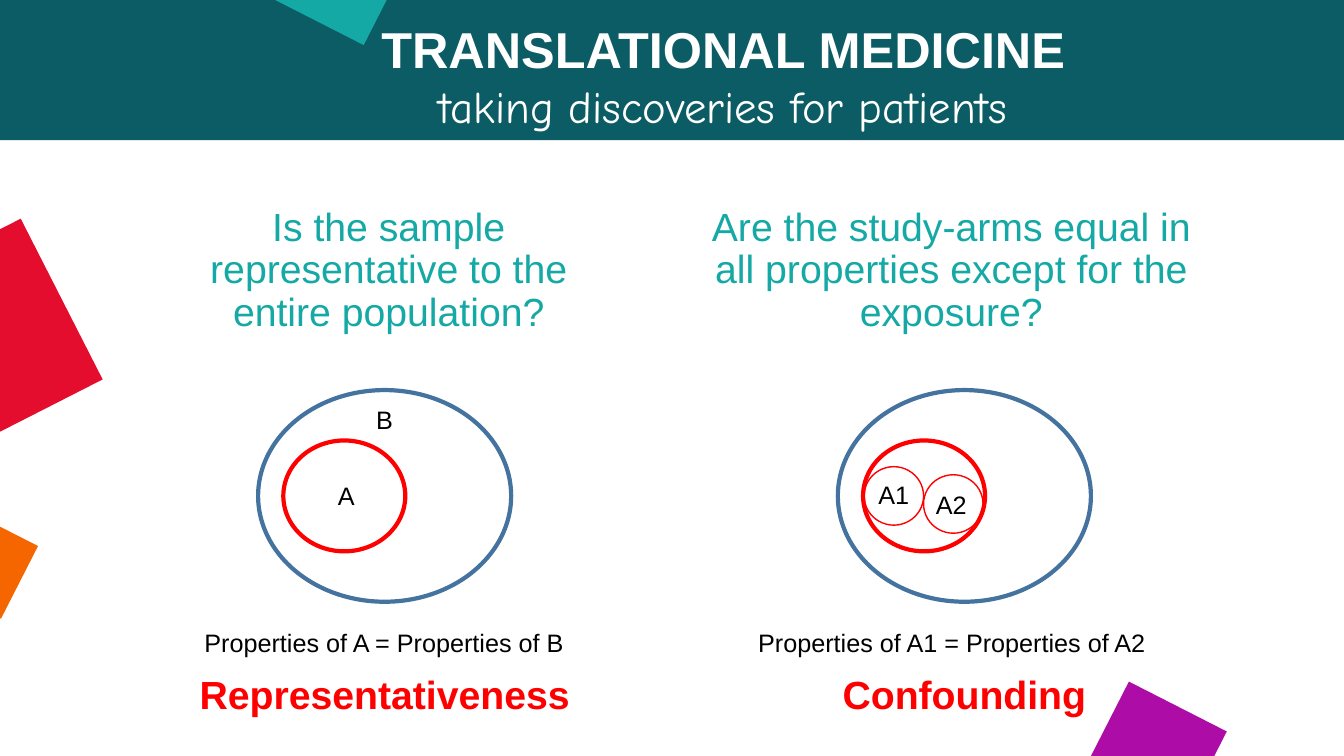
from pptx import Presentation
from pptx.dml.color import RGBColor
from pptx.enum.shapes import MSO_SHAPE
from pptx.enum.text import MSO_ANCHOR, MSO_AUTO_SIZE, PP_ALIGN
from pptx.oxml.ns import qn
from pptx.util import Inches, Pt

PETROL = RGBColor(0x0C, 0x5C, 0x65)
TEAL = RGBColor(0x15, 0xA9, 0xA6)
CRIMSON = RGBColor(0xE5, 0x0D, 0x2E)
PURPLE = RGBColor(0xAD, 0x0D, 0xA6)
ORANGE = RGBColor(0xF5, 0x66, 0x00)
BLUE = RGBColor(0x43, 0x73, 0x9E)
RED = RGBColor(0xFF, 0, 0)
BLACK = RGBColor(0, 0, 0)
WHITE = RGBColor(0xFF, 0xFF, 0xFF)

WIDTH, HEIGHT = 13.33, 7.5
PANEL_LEFT, PANEL_STEP = 1.66, 5.75
COMPARISON_LAYOUT = 4

HEADING = ["TRANSLATIONAL MEDICINE", "taking discoveries for patients"]

# left, top, width, height, rotation, colour
DECORATIONS = [
    (0, 0, WIDTH, 1.39, 0, PETROL),
    (-1.09, 2.48, 1.8, 1.79, 333, CRIMSON),
    (10.89, 6.95, 1.09, 1.09, 27, PURPLE),
    (-0.61, 5.18, 0.85, 0.81, 27, ORANGE),
    (2.91, -0.73, 0.98, 1.01, 27, TEAL),
]

# Offsets of the ovals and labels are measured from the panel's left edge
POPULATION_AND_SAMPLE = [
    (0.9, 3.87, 2.51, 2.1, BLUE, 3),
    (1.15, 4.37, 1.21, 1.1, RED, 3),
]
PANELS = [
    {
        "question": "Is the sample representative to the entire population?",
        "question_box": (1.7, 4.31),
        "arms": [],
        "labels": [("A", 1.59, 4.72, 0.37), ("B", 1.97, 3.96, 0.37),
                   ("Properties of A = Properties of B", 0.25, 6.17, 3.8)],
        "verdict": "Representativeness",
    },
    {
        "question": "Are the study-arms equal in all properties except for the exposure?",
        "question_box": (6.87, 5.13),
        "arms": [(1.16, 4.63, 0.59, 0.58, RED, 1), (1.75, 4.71, 0.59, 0.58, RED, 1)],
        "labels": [("A1", 1.2, 4.71, 0.51), ("A2", 1.77, 4.81, 0.51),
                   ("Properties of A1 = Properties of A2", -0.01, 6.17, 4.08)],
        "verdict": "Confounding",
    },
]


def place(shape, left, top, width, height):
    shape.left, shape.top = Inches(left), Inches(top)
    shape.width, shape.height = Inches(width), Inches(height)


def style(paragraph, size, color, bold=False, font="Arial", spacing=1.0):
    properties = paragraph._p.get_or_add_pPr()
    properties.set("marL", "0")
    properties.set("indent", "0")
    properties.append(properties.makeelement(qn("a:buNone"), {}))
    paragraph.alignment = PP_ALIGN.CENTER
    paragraph.line_spacing = spacing
    paragraph.space_before = Pt(0)
    for run in paragraph.runs:
        run.font.name, run.font.size, run.font.bold = font, Pt(size), bold
        run.font.color.rgb = color


def fill_placeholder(placeholder, text, box):
    place(placeholder, *box)
    frame = placeholder.text_frame
    frame.text = text
    frame.word_wrap = True
    frame.auto_size = MSO_AUTO_SIZE.NONE
    frame.vertical_anchor = MSO_ANCHOR.TOP
    return frame.paragraphs


def add_oval(slide, left, top, width, height, color, weight):
    oval = slide.shapes.add_shape(MSO_SHAPE.OVAL, Inches(left), Inches(top),
                                  Inches(width), Inches(height))
    oval.shadow.inherit = False
    oval.fill.background()
    oval.line.color.rgb = color
    oval.line.width = Pt(weight)


def add_label(slide, text, left, top, width):
    label = slide.shapes.add_textbox(Inches(left), Inches(top), Inches(width), Inches(0.4))
    label.text_frame.text = text
    label.text_frame.word_wrap = False
    style(label.text_frame.paragraphs[0], 18, BLACK)


def add_decorations(slide):
    """Add the header band and tilted squares behind the placeholders."""
    for left, top, width, height, rotation, color in DECORATIONS:
        block = slide.shapes.add_shape(MSO_SHAPE.RECTANGLE, Inches(left), Inches(top),
                                       Inches(width), Inches(height))
        block.rotation = rotation
        block.shadow.inherit = False
        block.fill.solid()
        block.fill.fore_color.rgb = color
        block.line.fill.background()
        slide.shapes.title.element.addprevious(block.element)


def add_panel(slide, panel, left, question, verdict):
    question_left, question_width = panel["question_box"]
    paragraphs = fill_placeholder(question, panel["question"],
                                  (question_left, 2.01, question_width, 1.18))
    style(paragraphs[0], 28, TEAL, spacing=0.9)
    paragraphs = fill_placeholder(verdict, panel["verdict"], (left, 6.65, 4.31, 0.59))
    style(paragraphs[0], 28, RED, bold=True, spacing=0.9)
    for offset, *oval in POPULATION_AND_SAMPLE + panel["arms"]:
        add_oval(slide, left + offset, *oval)
    for text, offset, top, width in panel["labels"]:
        add_label(slide, text, left + offset, top, width)


def main():
    presentation = Presentation()
    presentation.slide_width, presentation.slide_height = Inches(WIDTH), Inches(HEIGHT)
    slide = presentation.slides.add_slide(presentation.slide_layouts[COMPARISON_LAYOUT])
    add_decorations(slide)

    name, tagline = fill_placeholder(slide.shapes.title, "\n".join(HEADING),
                                     (3.67, 0.13, 7.01, 1.34))
    style(name, 36, WHITE, bold=True)
    style(tagline, 32, WHITE, font="Comic Neue")

    bodies = list(slide.placeholders)[1:]
    for index, panel in enumerate(PANELS):
        question, verdict = bodies[2 * index:2 * index + 2]
        add_panel(slide, panel, PANEL_LEFT + index * PANEL_STEP, question, verdict)

    presentation.save("out.pptx")


if __name__ == "__main__":
    main()
